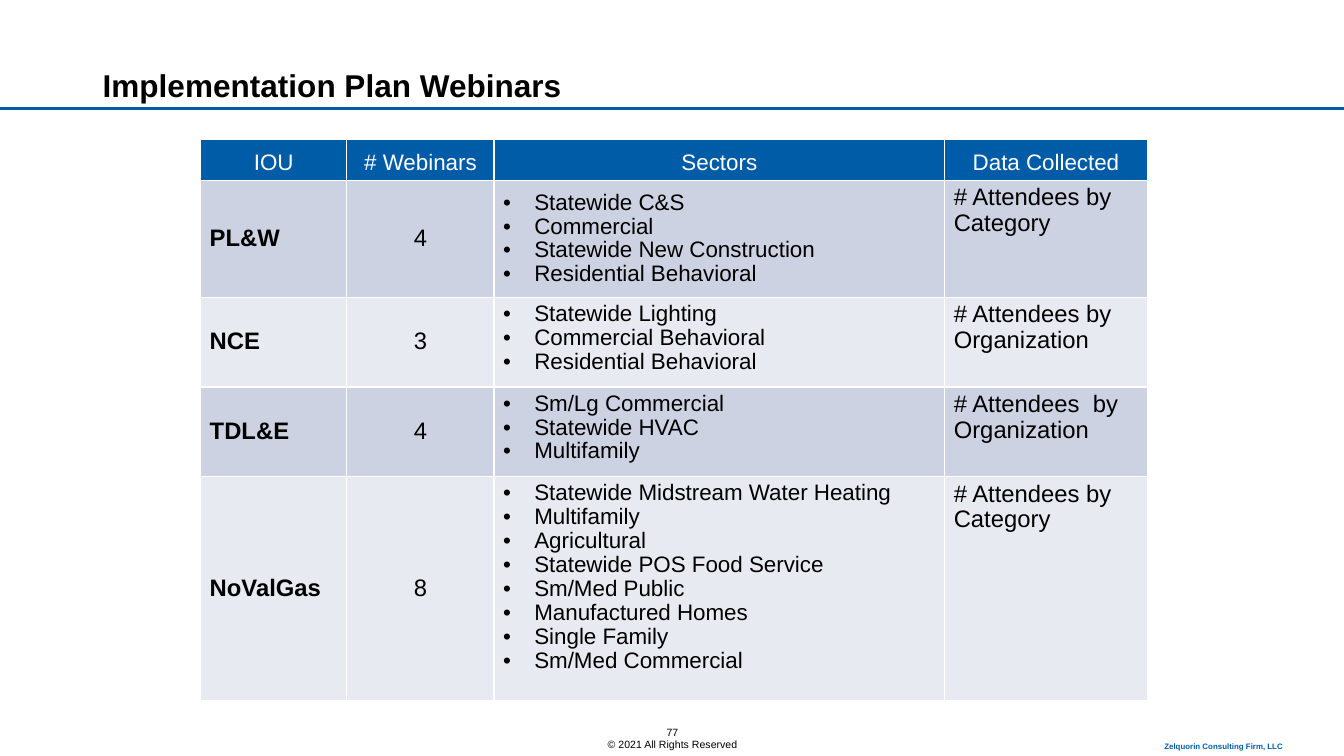
from pptx import Presentation
from pptx.dml.color import RGBColor
from pptx.enum.text import MSO_ANCHOR as ANC, PP_ALIGN as AL
from pptx.oxml.ns import qn
from pptx.util import Inches, Pt
from lxml.etree import SubElement

COLORS = {"blue": "005CA7", "black": "000000", "white": "FFFFFF",
          "odd": "CCD2E1", "even": "E7EAF1"}
HEADERS = ["IOU", "# Webinars", "Sectors", "Data Collected"]
UTILITIES = [
    ("PL&W", "4", ["Statewide C&S", "Commercial", "Statewide New Construction",
                   "Residential Behavioral"], "# Attendees by Category"),
    ("NCE", "3", ["Statewide Lighting", "Commercial Behavioral",
                  "Residential Behavioral"], "# Attendees by Organization"),
    ("TDL&E", "4", ["Sm/Lg Commercial", "Statewide HVAC", "Multifamily"],
     "# Attendees  by Organization"),
    ("NoValGas", "8", ["Statewide Midstream Water Heating", "Multifamily",
                       "Agricultural", "Statewide POS Food Service",
                       "Sm/Med Public", "Manufactured Homes", "Single Family",
                       "Sm/Med Commercial"], "# Attendees by Category"),
]
COL_WIDTHS = [1.45, 1.46, 4.47, 2.01]
ROW_HEIGHTS = [0.41, 1.16, 0.89, 0.89, 2.22]
TEXTS = [
    ((11.45, 7.29, 1.86, 0.21), ["Zelquorin Consulting Firm, LLC"],
     {"size": 5.6, "color": "blue", "bold": True}),
    ((4.63, 7.15, 4.08, 0.35), ["77", "© 2021 All Rights Reserved"],
     {"size": 7.5, "align": AL.CENTER}),
    ((0.92, 0.41, 11.64, 0.67), ["Implementation Plan Webinars"],
     {"size": 22.5, "bold": True}),
]
HEADER = {"size": 16, "color": "white", "align": AL.CENTER, "spacing": 0.96}
BODY = {"size": 17, "spacing": 0.96}
COLUMN_FORMATS = [
    (ANC.MIDDLE, {**BODY, "bold": True}),
    (ANC.MIDDLE, {**BODY, "align": AL.CENTER}),
    (ANC.TOP, {**BODY, "size": 16, "bullet": True}),
    (ANC.TOP, BODY),
]


def rgb(name):
    return RGBColor.from_string(COLORS[name])


def write(tf, lines, size, color="black", bold=False, align=AL.LEFT,
          spacing=1.0, bullet=False):
    tf.word_wrap = True
    for i, line in enumerate(lines):
        p = tf.add_paragraph() if i else tf.paragraphs[0]
        for key, value in {"alignment": align, "line_spacing": spacing}.items():
            setattr(p, key, value)
        if bullet:
            pPr = p._p.get_or_add_pPr()
            pPr.set("marL", str(Inches(0.31)))
            pPr.set("indent", str(-Inches(0.31)))
            SubElement(pPr, qn("a:buFont")).set("typeface", "Arial")
            SubElement(pPr, qn("a:buChar")).set("char", "•")
        r = p.add_run()
        r.text = line
        for key, value in {"name": "Arial", "size": Pt(size), "bold": bold}.items():
            setattr(r.font, key, value)
        r.font.color.rgb = rgb(color)


def fill_cell(cell, lines, fill, anchor, style):
    margins = {"margin_left": 0.09, "margin_right": 0.09,
               "margin_top": 0.05, "margin_bottom": 0.05}
    for key, value in margins.items():
        setattr(cell, key, Inches(value))
    cell.vertical_anchor = anchor
    write(cell.text_frame, lines, **style)
    tcPr = cell._tc.get_or_add_tcPr()
    for side in ("lnL", "lnR", "lnT", "lnB"):
        ln = SubElement(tcPr, qn("a:" + side), w=str(Pt(1)))
        SubElement(SubElement(ln, qn("a:solidFill")), qn("a:srgbClr"),
                   val=COLORS["white"])
    cell.fill.solid()
    cell.fill.fore_color.rgb = rgb(fill)


def add_webinar_table(s):
    shape = s.shapes.add_table(
        len(ROW_HEIGHTS), len(COL_WIDTHS), Inches(1.99), Inches(1.38),
        Inches(sum(COL_WIDTHS)), Inches(sum(ROW_HEIGHTS)))
    table = shape.table
    for column, width in zip(table.columns, COL_WIDTHS):
        column.width = Inches(width)
    for row, height in zip(table.rows, ROW_HEIGHTS):
        row.height = Inches(height)
    for c, header in enumerate(HEADERS):
        fill_cell(table.cell(0, c), [header], "blue", ANC.BOTTOM, HEADER)
    for r, utility in enumerate(UTILITIES, 1):
        for c, (value, (anchor, style)) in enumerate(zip(utility, COLUMN_FORMATS)):
            lines = value if isinstance(value, list) else [value]
            fill = "odd" if r % 2 else "even"
            if r == 1 and style.get("bullet"):
                anchor = ANC.MIDDLE
            fill_cell(table.cell(r, c), lines, fill, anchor, style)


def main():
    prs = Presentation()
    prs.slide_width, prs.slide_height = Inches(13.33), Inches(7.5)
    s = prs.slides.add_slide(prs.slide_layouts[6])
    rule = s.shapes.add_connector(1, 0, Inches(1.08), prs.slide_width, Inches(1.08))
    rule.line.color.rgb = rgb("blue")
    rule.line.width = Pt(2.25)
    SubElement(rule._element.spPr, qn("a:effectLst"))
    for box, lines, style in TEXTS:
        tf = s.shapes.add_textbox(*map(Inches, box)).text_frame
        tf.vertical_anchor = ANC.BOTTOM
        write(tf, lines, **style)
    add_webinar_table(s)
    prs.save("out.pptx")


if __name__ == "__main__":
    main()
